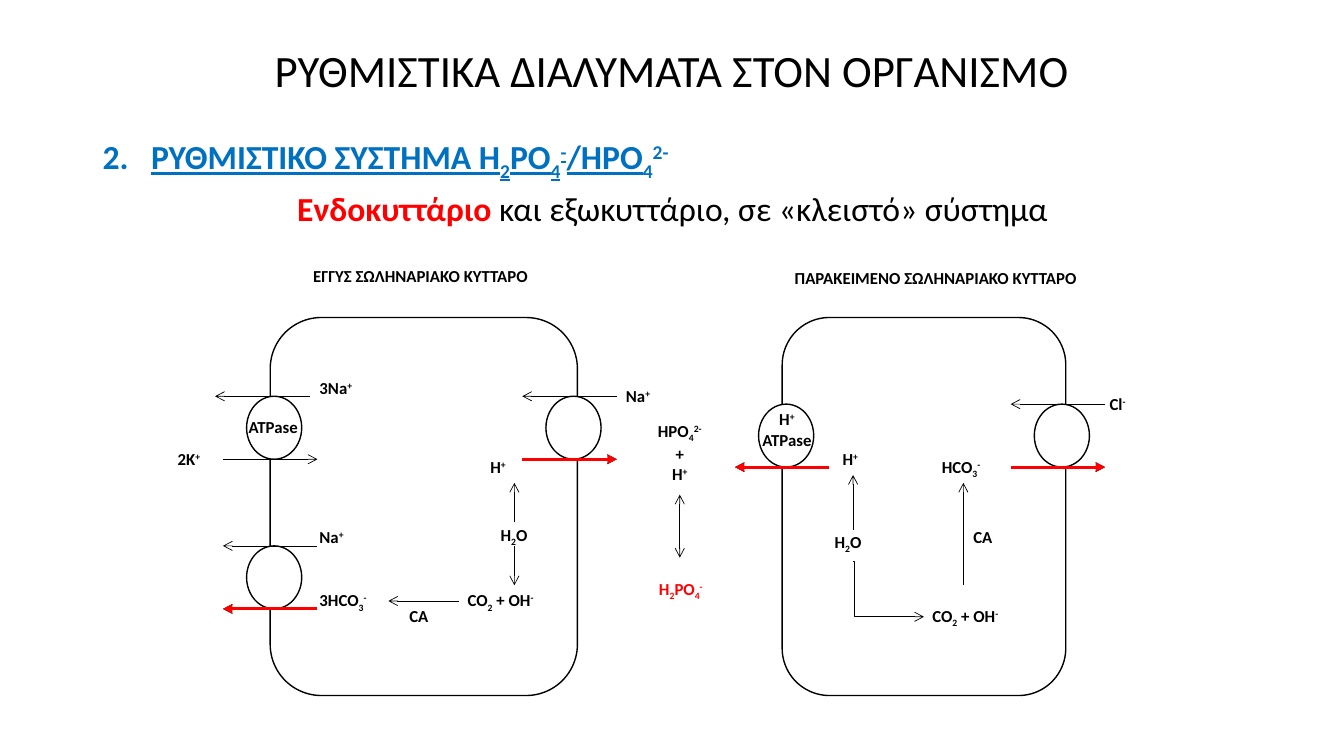
from lxml.etree import SubElement
from pptx import Presentation
from pptx.dml.color import RGBColor
from pptx.enum.shapes import MSO_CONNECTOR as CONNECTOR, MSO_SHAPE as SHAPE
from pptx.enum.text import MSO_ANCHOR as ANCHOR, PP_ALIGN as ALIGN
from pptx.oxml.ns import qn
from pptx.util import Inches, Pt

WIDTH, HEIGHT = 13.33, 7.5
UNIT = HEIGHT / 96               # square grid of the diagram
ORIGIN_X, ORIGIN_Y = 2.68, 3.15  # top left corner of the first cell
BLACK, WHITE, RED, BLUE = "000000", "FFFFFF", "FF0000", "0070C0"
BASELINES = {"_": "-25000", "^": "30000"}

# Columns and rows of the grid
CELLS = [(0, 39), (65, 36)]
CARRIERS = [(-3, 10), (-3, 29), (35, 10), (62, 11), (97, 11)]
RED_ARROWS = [(6, 37, -6, 37), (71, 19, 59, 19), (32, 18, 44, 18), (94, 19, 106, 19)]
BLACK_ARROWS = RED_ARROWS + [
    (5, 10, -7, 10), (6, 29, -6, 29), (44, 10, 32, 10), (106, 11, 94, 11),
    (-6, 18, 6, 18), (24, 36, 15, 36), (31, 26, 31, 21), (31, 29, 31, 34),
    (74, 27, 74, 20), (88, 34, 88, 21),
]
LABELS = [
    (5, 7, "3Na|^+"), (-13, 16, "2K|^+"), (5, 26, "Na|^+"), (5, 34, "3HCO|_3|^-"),
    (23.8, 34, "CO|_2| + OH|^-"), (28, 25.7, "H|_2|O"), (26.7, 17, "H|^+"),
    (43.9, 8, "Na|^+"), (-4, 12, "ATPase"), (71.4, 16, "H|^+"), (16.4, 36, "CA"),
    (70.4, 26.6, "H|_2|O"), (84, 17, "HCO|_3|^-"), (105.3, 9, "Cl|^-"),
    (88, 26, "CA"), (82.8, 36, "CO|_2| + OH|^-"),
]
CENTRED_LABELS = [
    (19.1, -7.2, 42, ["ΕΓΓΥΣ ΣΩΛΗΝΑΡΙΑΚΟ ΚΥΤΤΑΡΟ"]),
    (84.5, -7, 42, ["ΠΑΡΑΚΕΙΜΕΝΟ ΣΩΛΗΝΑΡΙΑΚΟ ΚΥΤΤΑΡΟ"]),
    (65.6, 11, 14, ["H|^+", "ATPase"]),
    (52, 12.5, 14, ["HPO|_4|^2-", "+", "Η|^+"]),
]


def color(value):
    return RGBColor.from_string(value)


def grid_x(column):
    return Inches(ORIGIN_X + column * UNIT)


def grid_y(row):
    return Inches(ORIGIN_Y + row * UNIT)


def size(units):
    return Inches(units * UNIT)


def add_runs(paragraph, text, ink=BLACK, points=12, bold=True, underline=False):
    """Split text at each bar; a leading _ lowers a piece and ^ raises it."""
    font_format = {"name": "Calibri", "size": Pt(points), "bold": bold, "underline": underline}
    for piece in text.split("|"):
        run = paragraph.add_run()
        baseline = BASELINES.get(piece[0])
        run.text = piece[1:] if baseline else piece
        for key, value in font_format.items():
            setattr(run.font, key, value)
        run.font.color.rgb = color(ink)
        if baseline:
            run.font._element.set("baseline", baseline)


def add_text_frame(slide, left, top, width, height):
    frame = slide.shapes.add_textbox(left, top, width, height).text_frame
    frame.word_wrap = True
    return frame


def add_label(slide, column, row, lines, width=14, ink=BLACK, align=ALIGN.LEFT):
    frame = add_text_frame(slide, grid_x(column), grid_y(row), size(width), Inches(0.1 + 0.2 * len(lines)))
    for index, line in enumerate(lines):
        paragraph = frame.add_paragraph() if index else frame.paragraphs[0]
        paragraph.alignment = align
        add_runs(paragraph, line, ink)


def add_outline(slide, kind, column, row, width, height, fill=None):
    shape = slide.shapes.add_shape(kind, grid_x(column), grid_y(row), size(width), size(height))
    shape.shadow.inherit = False
    if fill:
        shape.fill.solid()
        shape.fill.fore_color.rgb = color(fill)
    else:
        shape.fill.background()
    shape.line.color.rgb = color(BLACK)
    shape.line.width = Pt(1)


def add_arrow(slide, ends, ink=BLACK, points=0.5, head="arrow", both=False, kind=CONNECTOR.STRAIGHT):
    x1, y1, x2, y2 = ends
    arrow = slide.shapes.add_connector(kind, grid_x(x1), grid_y(y1), grid_x(x2), grid_y(y2))
    arrow.line.color.rgb = color(ink)
    arrow.line.width = Pt(points)
    properties = arrow._element.spPr
    line = properties.find(qn("a:ln"))
    for tag in ["a:headEnd", "a:tailEnd"] if both else ["a:tailEnd"]:
        SubElement(line, qn(tag), type=head)
    SubElement(properties, qn("a:effectLst"))
    return arrow


def add_elbow_arrow(slide, ends):
    """Turn down right at the start of the arrow."""
    arrow = add_arrow(slide, ends, kind=CONNECTOR.ELBOW)
    geometry = arrow._element.spPr.find(qn("a:prstGeom"))
    SubElement(geometry.find(qn("a:avLst")), qn("a:gd"), name="adj1", fmla="val 1500")


def add_title(slide):
    frame = add_text_frame(slide, 0, 0, Inches(WIDTH), Inches(1.45))
    frame.vertical_anchor = ANCHOR.MIDDLE
    paragraph = frame.paragraphs[0]
    paragraph.alignment = ALIGN.CENTER
    paragraph.line_spacing = 0.9
    add_runs(paragraph, "ΡΥΘΜΙΣΤΙΚΑ ΔΙΑΛΥΜΑΤΑ ΣΤΟΝ ΟΡΓΑΝΙΣΜΟ", points=32, bold=False)


def add_subtitle(slide):
    frame = add_text_frame(slide, Inches(0.92), Inches(1.31), Inches(11.5), Inches(1.1))
    system, location = frame.paragraphs[0], frame.add_paragraph()
    for paragraph in (system, location):
        paragraph.line_spacing = 0.9

    properties = system._p.get_or_add_pPr()
    properties.set("marL", str(Inches(0.48)))
    properties.set("indent", str(-Inches(0.48)))
    SubElement(properties, qn("a:buFont"), typeface="Calibri")
    SubElement(properties, qn("a:buAutoNum"), type="arabicPeriod", startAt="2")
    add_runs(system, "ΡΥΘΜΙΣΤΙΚΟ ΣΥΣΤΗΜΑ H|_2|PO|_4|^-|/HPO", BLUE, 24, underline=True)
    add_runs(system, "_4|^2-", BLUE, 24)

    location.alignment = ALIGN.CENTER
    location.space_before = Pt(10)
    add_runs(location, "Ενδοκυττάριο", RED, 24)
    add_runs(location, " και εξωκυττάριο, σε «κλειστό» σύστημα", points=24, bold=False)


def main():
    presentation = Presentation()
    presentation.slide_width, presentation.slide_height = Inches(WIDTH), Inches(HEIGHT)
    slide = presentation.slides.add_slide(presentation.slide_layouts[6])
    add_title(slide)
    add_subtitle(slide)
    for column, width in CELLS:
        add_outline(slide, SHAPE.ROUNDED_RECTANGLE, column, 0, width, 48)
    for column, row in CARRIERS:
        add_outline(slide, SHAPE.OVAL, column, row, 7, 8, WHITE)
    for ends in BLACK_ARROWS:
        add_arrow(slide, ends)
    add_arrow(slide, (52, 22.5, 52, 30.5), both=True)
    add_elbow_arrow(slide, (74, 31, 83, 38))
    for column, row, text in LABELS:
        add_label(slide, column, row, [text])
    add_label(slide, 48.1, 32.5, ["H|_2|PO|_4|^-"], ink=RED)
    for center, row, width, lines in CENTRED_LABELS:
        add_label(slide, center - width / 2, row, lines, width, align=ALIGN.CENTER)
    for ends in RED_ARROWS:
        add_arrow(slide, ends, RED, 2.25, "triangle")
    presentation.save("out.pptx")


if __name__ == "__main__":
    main()
